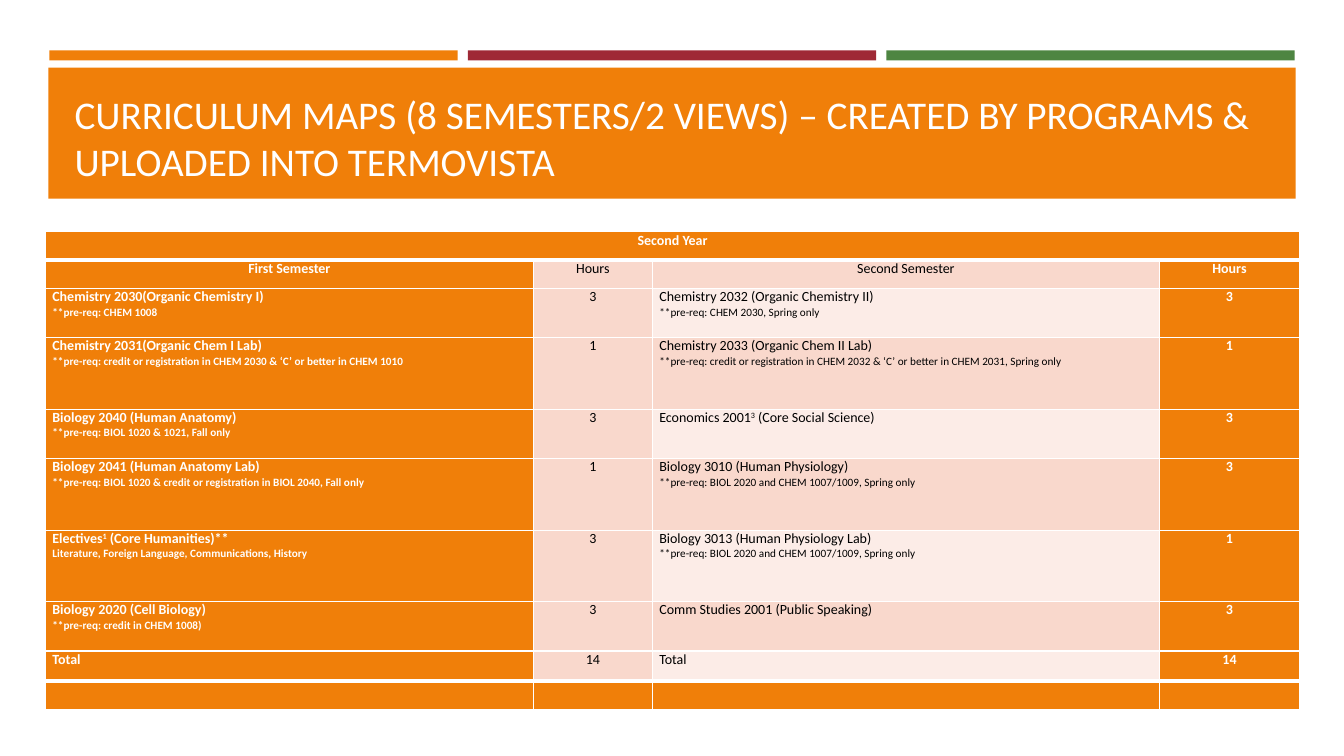
from dataclasses import dataclass

from lxml import etree
from pptx import Presentation
from pptx.dml.color import RGBColor
from pptx.enum.shapes import MSO_SHAPE
from pptx.enum.text import MSO_ANCHOR, MSO_AUTO_SIZE, PP_ALIGN
from pptx.oxml.ns import qn
from pptx.util import Inches, Pt

RECT = MSO_SHAPE.RECTANGLE
LEFT, CENTER = PP_ALIGN.LEFT, PP_ALIGN.CENTER
BOTTOM, NO_AUTOFIT = MSO_ANCHOR.BOTTOM, MSO_AUTO_SIZE.NONE
FONT = "Calibri"
COLORS = {
    "orange": "F07F09",
    "red": "9F2936",
    "green": "4E8542",
    "band_dark": "F9D8CC",
    "band_light": "FCECE7",
    "white": "FFFFFF",
    "black": "000000",
}
COLUMN_WIDTHS = (4.84, 1.18, 5.03, 1.39)
LINE_ROW, NOTE_ROW, TALL_ROW, TOTAL_ROW = 0.28, 0.49, 0.71, 0.3
THIN, THICK = 1, 3


@dataclass
class Bar:
    left: float
    top: float
    width: float
    height: float
    color: str


@dataclass
class Entry:
    name: str
    note: str = ""
    mark: str = ""
    tail: str = ""


@dataclass
class Term:
    height: float
    first: Entry
    first_hours: str
    second: Entry
    second_hours: str


BARS = [Bar(0.49 + 4.15 * i, 0.5, 4.05, 0.1, color)
        for i, color in enumerate(("orange", "red", "green"))]
BARS.append(Bar(0.48, 0.67, 12.37, 1.3, "orange"))

PHYSIOLOGY_NOTE = "**pre-req: BIOL 2020 and CHEM 1007/1009, Spring only"
TERMS = [
    Term(LINE_ROW, Entry("First Semester"), "Hours", Entry("Second Semester"), "Hours"),
    Term(NOTE_ROW,
         Entry("Chemistry 2030(Organic Chemistry I)", "**pre-req: CHEM 1008"), "3",
         Entry("Chemistry 2032 (Organic Chemistry II)",
               "**pre-req: CHEM 2030, Spring only"), "3"),
    Term(TALL_ROW,
         Entry("Chemistry 2031(Organic Chem I Lab)",
               "**pre-req: credit or registration in CHEM 2030 & ‘C’ or better in CHEM 1010"), "1",
         Entry("Chemistry 2033 (Organic Chem II Lab)",
               "**pre-req: credit or registration in CHEM 2032 & ‘C’ or better in CHEM 2031, "
               "Spring only"), "1"),
    Term(NOTE_ROW,
         Entry("Biology 2040 (Human Anatomy)", "**pre-req: BIOL 1020 & 1021, Fall only"), "3",
         Entry("Economics 2001", mark="3", tail=" (Core Social Science)"), "3"),
    Term(TALL_ROW,
         Entry("Biology 2041 (Human Anatomy Lab)",
               "**pre-req: BIOL 1020 & credit or registration in BIOL 2040, Fall only"), "1",
         Entry("Biology 3010 (Human Physiology)", PHYSIOLOGY_NOTE), "3"),
    Term(TALL_ROW,
         Entry("Electives", "Literature, Foreign Language, Communications, History",
               "1", " (Core Humanities)**"), "3",
         Entry("Biology 3013 (Human Physiology Lab)", PHYSIOLOGY_NOTE), "1"),
    Term(NOTE_ROW,
         Entry("Biology 2020 (Cell Biology)", "**pre-req: credit in CHEM 1008)"), "3",
         Entry("Comm Studies 2001 (Public Speaking)"), "3"),
    Term(TOTAL_ROW, Entry("Total"), "14", Entry("Total"), "14"),
]


def rgb(color: str) -> RGBColor:
    return RGBColor.from_string(COLORS[color])


def add_bar(s, bar: Bar) -> None:
    sp = s.shapes.add_shape(RECT, Inches(bar.left), Inches(bar.top),
                            Inches(bar.width), Inches(bar.height))
    sp.shadow.inherit = False
    sp.fill.solid()
    sp.fill.fore_color.rgb = rgb(bar.color)
    sp.line.fill.background()


def add_run(p, text: str, size: int, color: str, bold: bool):
    r = p.add_run()
    r.text = text
    for name, value in {"name": FONT, "size": Pt(size), "bold": bold}.items():
        setattr(r.font, name, value)
    r.font.color.rgb = rgb(color)
    return r


def add_title(s, text: str) -> None:
    """Format the title placeholder and bring it in front of its banner."""
    title = s.shapes.title
    box = {"left": 0.64, "top": 0.77, "width": 12.06, "height": 1.11}
    for name, value in box.items():
        setattr(title, name, Inches(value))
    tf = title.text_frame
    frame = {"word_wrap": True, "auto_size": NO_AUTOFIT, "vertical_anchor": BOTTOM}
    for name, value in frame.items():
        setattr(tf, name, value)
    p = tf.paragraphs[0]
    p.alignment = LEFT
    add_run(p, text, 28, "white", False)
    title.element.getparent().append(title.element)


def format_cell(cell, fill: str, top: int, bottom: int) -> None:
    """Set fill, margins and white borders, with top and bottom widths in points."""
    margins = {"margin_left": 0.07, "margin_right": 0.07, "margin_top": 0, "margin_bottom": 0}
    for name, value in margins.items():
        setattr(cell, name, Inches(value))
    cell.fill.solid()
    cell.fill.fore_color.rgb = rgb(fill)
    tc_pr = cell._tc.get_or_add_tcPr()
    borders = {"a:lnL": THIN, "a:lnR": THIN, "a:lnT": top, "a:lnB": bottom}
    for i, (tag, width) in enumerate(borders.items()):
        ln = etree.Element(qn(tag), w=str(Pt(width)))
        solid = etree.SubElement(ln, qn("a:solidFill"))
        etree.SubElement(solid, qn("a:srgbClr"), val=COLORS["white"])
        tc_pr.insert(i, ln)


def write_entry(cell, entry: Entry, align: PP_ALIGN, color: str, bold: bool) -> None:
    tf = cell.text_frame
    p = tf.paragraphs[0]
    p.alignment = align
    if not entry.name:
        etree.SubElement(p._p, qn("a:endParaRPr"), sz="1000")
        return
    add_run(p, entry.name, 10, color, bold)
    if entry.mark:
        mark = add_run(p, entry.mark, 10, color, bold)
        mark.font._element.set("baseline", "30000")
        add_run(p, entry.tail, 10, color, bold)
    if entry.note:
        p = tf.add_paragraph()
        p.alignment = align
        add_run(p, entry.note, 8, color, bold)


def add_curriculum(s) -> None:
    blank = Entry("")
    rows = [[Entry("Second Year"), blank, blank, blank]]
    rows += [[t.first, Entry(t.first_hours), t.second, Entry(t.second_hours)] for t in TERMS]
    rows.append([blank] * 4)
    heights = [LINE_ROW, *(t.height for t in TERMS), LINE_ROW]
    last = len(rows) - 1
    table = s.shapes.add_table(len(rows), len(COLUMN_WIDTHS), Inches(0.45), Inches(2.3),
                               Inches(sum(COLUMN_WIDTHS)), Inches(sum(heights))).table
    table.first_row = table.horz_banding = False
    for column, width in zip(table.columns, COLUMN_WIDTHS):
        column.width = Inches(width)
    for i, (entries, height) in enumerate(zip(rows, heights)):
        table.rows[i].height = Inches(height)
        top = THICK if i in (1, last) else THIN
        bottom = THICK if i in (0, last - 1) else THIN
        for j, entry in enumerate(entries):
            strong = i in (0, last) or j in (0, 3)
            light = j == 2 and i % 2 == 0
            fill = "orange" if strong else "band_light" if light else "band_dark"
            align = CENTER if i < 2 or j in (1, 3) else LEFT
            cell = table.cell(i, j)
            format_cell(cell, fill, top, bottom)
            write_entry(cell, entry, align, "white" if strong else "black", strong)
    table.cell(0, 0).merge(table.cell(0, 3))


def main() -> None:
    prs = Presentation()
    prs.slide_width, prs.slide_height = Inches(13.33), Inches(7.5)
    s = prs.slides.add_slide(prs.slide_layouts[5])
    for bar in BARS:
        add_bar(s, bar)
    add_title(s, "CURRICULUM MAPS (8 SEMESTERS/2 VIEWS) – CREATED BY PROGRAMS & "
                 "UPLOADED INTO TERMOVISTA")
    add_curriculum(s)
    prs.save("out.pptx")


if __name__ == "__main__":
    main()
